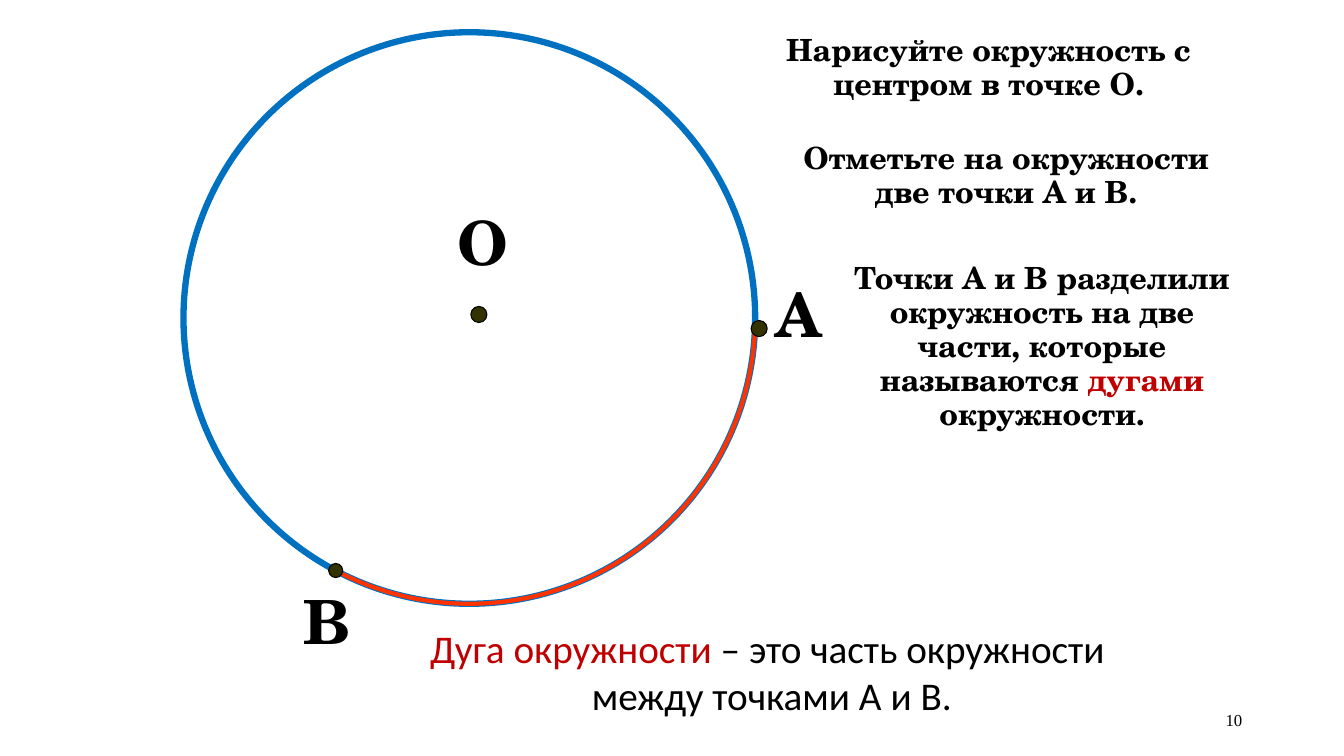
from pptx import Presentation
from pptx.dml.color import RGBColor
from pptx.enum.shapes import MSO_SHAPE as SHAPE
from pptx.enum.text import MSO_ANCHOR as ANCHOR, PP_ALIGN as ALIGN
from pptx.util import Inches, Pt

COLORS = {
    "circle": "0070C0",
    "arc": "FF3300",
    "point": "333300",
    "text": "000000",
    "term": "C00000",
}
STYLES = {
    "label": {"name": "TeX Gyre Schola", "size": Pt(43.5), "bold": True},
    "task": {"name": "TeX Gyre Schola", "size": Pt(21.8), "bold": True},
    "definition": {"name": "Calibri", "size": Pt(28)},
    "number": {"name": "Times New Roman", "size": Pt(12)},
}


class Board:
    def __init__(self, prs):
        self.slide = prs.slides.add_slide(prs.slide_layouts[6])

    def color(self, key):
        return RGBColor.from_string(COLORS[key])

    def shape(self, kind, box, line, width, fill=None):
        s = self.slide.shapes.add_shape(kind, *map(Inches, box))
        s.shadow.inherit = False
        if fill:
            s.fill.solid()
            s.fill.fore_color.rgb = self.color(fill)
        else:
            s.fill.background()
        s.line.color.rgb = self.color(line)
        s.line.width = Pt(width)
        return s

    def arc(self, box, start, end):
        s = self.shape(SHAPE.ARC, box, "arc", 3)
        # Angles are stored in 1/60000 degree, adjustments in 1/100000
        s.adjustments[0] = start * 0.6
        s.adjustments[1] = end * 0.6

    def point(self, x, y, size):
        self.shape(SHAPE.OVAL, (x, y, size, size), "text", 0.75, "point")

    def text(self, box, style, paragraphs, spacing=0.93,
             align=ALIGN.CENTER, anchor=ANCHOR.TOP):
        tf = self.slide.shapes.add_textbox(*map(Inches, box)).text_frame
        tf.word_wrap = True
        tf.vertical_anchor = anchor
        for i, runs in enumerate(paragraphs):
            p = tf.add_paragraph() if i else tf.paragraphs[0]
            p.alignment = align
            p.line_spacing = spacing
            for words, color in runs:
                r = p.add_run()
                r.text = words
                for key, value in STYLES[style].items():
                    setattr(r.font, key, value)
                r.font.color.rgb = self.color(color)


def main():
    prs = Presentation()
    prs.slide_width, prs.slide_height = Inches(13.33), Inches(7.5)
    board = Board(prs)

    # Circle, its centre and the arc from A to B
    circle = (1.82, 0.32, 5.67, 5.67)
    board.shape(SHAPE.OVAL, circle, "circle", 4.5)
    board.point(4.67, 3.04, 0.16)
    board.arc(circle, 2, 117.7)
    board.point(3.26, 5.59, 0.14)
    board.point(7.45, 3.18, 0.16)

    # Point names
    for name, x, y, width in (("А", 7.59, 2.76, 0.55),
                              ("В", 2.91, 5.81, 0.63),
                              ("О", 4.4, 2.05, 0.78)):
        board.text((x, y, width, 0.78), "label", [[(name, "text")]])

    # Tasks on the right
    tasks = (
        ((7.5, 0.29, 4.61, 0.78),
         [("Нарисуйте окружность с центром в точке О.", "text")]),
        ((7.86, 1.36, 4.24, 0.78),
         [("Отметьте на окружности две точки А и В.", "text")]),
        ((8.28, 2.55, 4.11, 1.8),
         [("Точки А и В разделили окружность на две части, "
           "которые называются ", "text"),
          ("дугами ", "term"),
          ("окружности.", "text")]),
    )
    for box, runs in tasks:
        board.text(box, "task", [runs])

    # Slide number and definition
    board.text((9.42, 6.95, 3, 0.4), "number", [[("10", "text")]],
               0.95, ALIGN.RIGHT, ANCHOR.MIDDLE)
    board.text((2.92, 6.14, 9.47, 1.04), "definition", [
        [("Дуга окружности ", "term"), ("– это часть окружности ", "text")],
        [("между точками А и В.", "text")],
    ], 1.0)

    prs.save("out.pptx")


if __name__ == "__main__":
    main()
